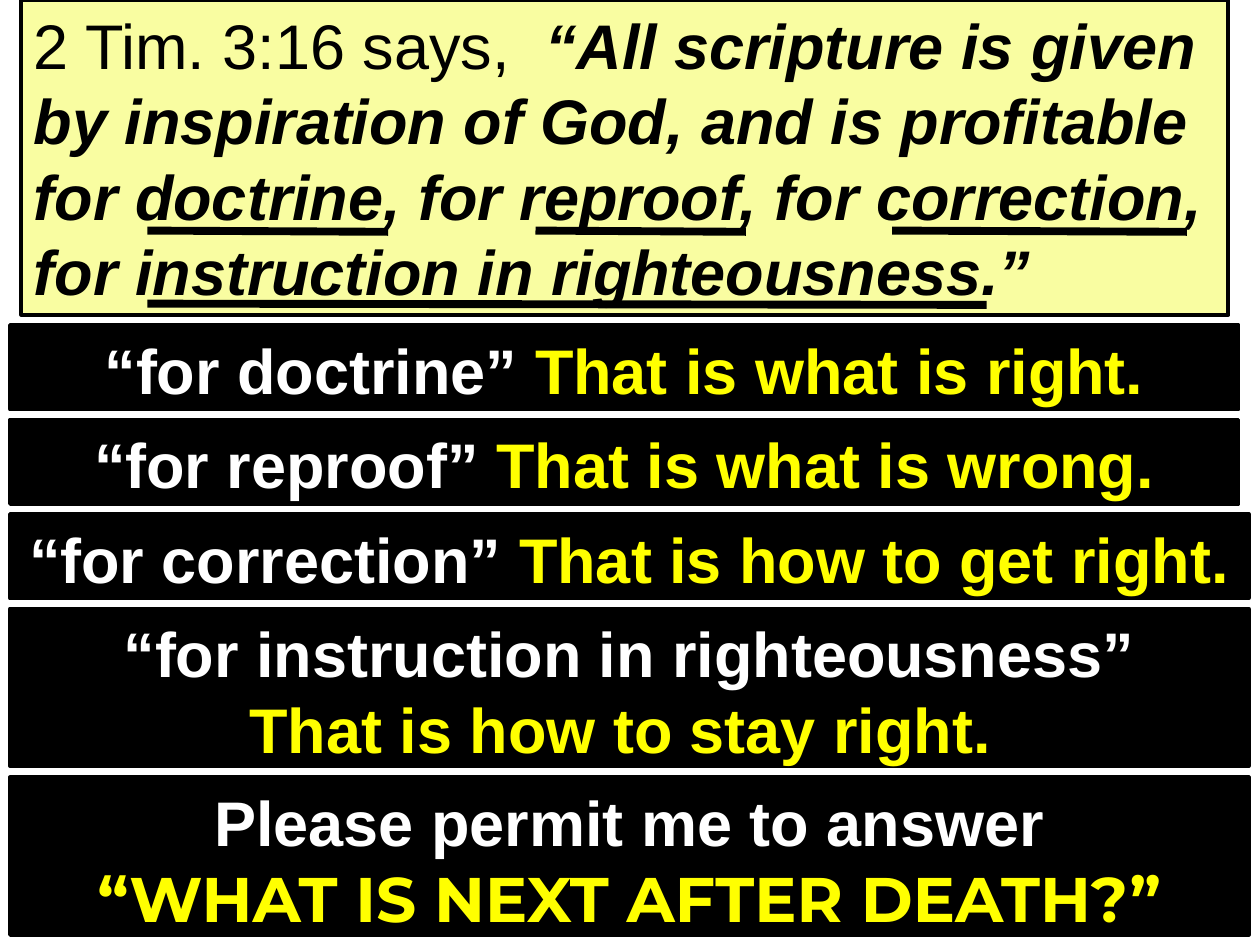
import pptx
import pptx.util
import pptx.dml.color
import pptx.enum.shapes
import pptx.enum.text
import pptx.oxml.ns
import lxml.etree
from pptx.util import Inches

BLACK, WHITE, YELLOW, CREAM = "000000", "FFFFFF", "FFFF00", "F9FDA1"


def colour(value):
    return pptx.dml.color.RGBColor.from_string(value)


class VerseSlide:
    font = "Arial"
    size = pptx.util.Pt(36)
    border = pptx.util.Pt(2.25)
    stroke = pptx.util.Pt(4.5)

    def __init__(self, slide):
        self.slide = slide

    def panel(self, left, top, width, height, fill, align, paragraphs):
        panel = self.slide.shapes.add_shape(
            pptx.enum.shapes.MSO_SHAPE.RECTANGLE,
            Inches(left), Inches(top), Inches(width), Inches(height))
        panel.shadow.inherit = False
        panel.fill.solid()
        panel.fill.fore_color.rgb = colour(fill)
        panel.line.color.rgb = colour(BLACK)
        panel.line.width = self.border
        frame = panel.text_frame
        frame.word_wrap = True
        frame.vertical_anchor = pptx.enum.text.MSO_ANCHOR.TOP
        for index, runs in enumerate(paragraphs):
            paragraph = frame.add_paragraph() if index else frame.paragraphs[0]
            paragraph.alignment = align
            for run in runs:
                self.run(paragraph, *run)

    def run(self, paragraph, text, ink, bold=True, italic=False, font=None):
        run = paragraph.add_run()
        run.text = text
        run.font.name = font or self.font
        run.font.size = self.size
        run.font.bold = bold
        run.font.italic = italic
        run.font.color.rgb = colour(ink)

    def underline(self, start, end, top):
        line = self.slide.shapes.add_connector(
            pptx.enum.shapes.MSO_CONNECTOR.STRAIGHT,
            Inches(start), Inches(top), Inches(end), Inches(top + 0.01))
        line.line.color.rgb = colour(BLACK)
        line.line.width = self.stroke
        properties = line._element.spPr
        lxml.etree.SubElement(properties, pptx.oxml.ns.qn("a:effectLst"))


def main():
    deck = pptx.Presentation()
    deck.slide_width, deck.slide_height = Inches(10), Inches(7.5)
    verse = VerseSlide(deck.slides.add_slide(deck.slide_layouts[6]))
    left = pptx.enum.text.PP_ALIGN.LEFT
    center = pptx.enum.text.PP_ALIGN.CENTER

    verse.panel(0.17, 0, 9.58, 2.5, CREAM, left, [[
        ("2 Tim. 3:16 says,  ", BLACK, False),
        ("“All scripture is given by inspiration of God, and is profitable "
         "for doctrine, for reproof, for correction, for instruction in "
         "righteousness.”", BLACK, True, True)]])

    answers = [
        (9.75, "“for doctrine” ", "That is what is right."),
        (9.75, "“for reproof” ", "That is what is wrong."),
        (9.83, "“for correction” ", "That is how to get right."),
    ]
    for row, (width, purpose, meaning) in enumerate(answers):
        verse.panel(0.08, 2.58 + 0.75 * row, width, 0.67, BLACK, center,
                    [[(purpose, WHITE), (meaning, YELLOW)]])

    verse.panel(0.08, 4.83, 9.83, 1.25, BLACK, center, [
        [("“for instruction in righteousness”", WHITE)],
        [("That is how to stay right. ", YELLOW)]])

    for start, end, top in [(1.17, 3.08, 1.83), (4.25, 5.92, 1.83),
                            (7.08, 9.42, 1.83), (1.17, 7.83, 2.41)]:
        verse.underline(start, end, top)

    verse.panel(0.08, 6.17, 9.83, 1.25, BLACK, center, [
        [("Please permit me to answer", WHITE)],
        [("“WHAT IS NEXT AFTER DEATH?”", YELLOW, True, False, "Montserrat")]])

    deck.save("out.pptx")


if __name__ == "__main__":
    main()
